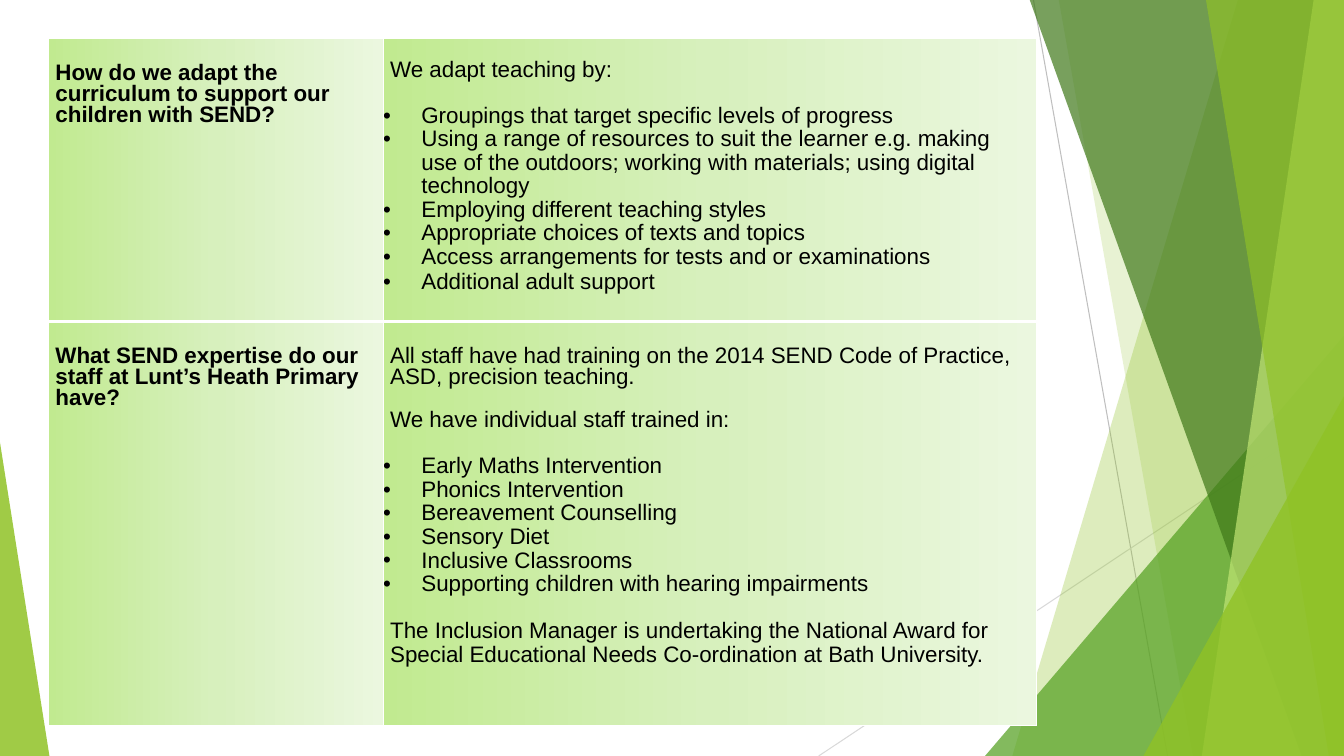
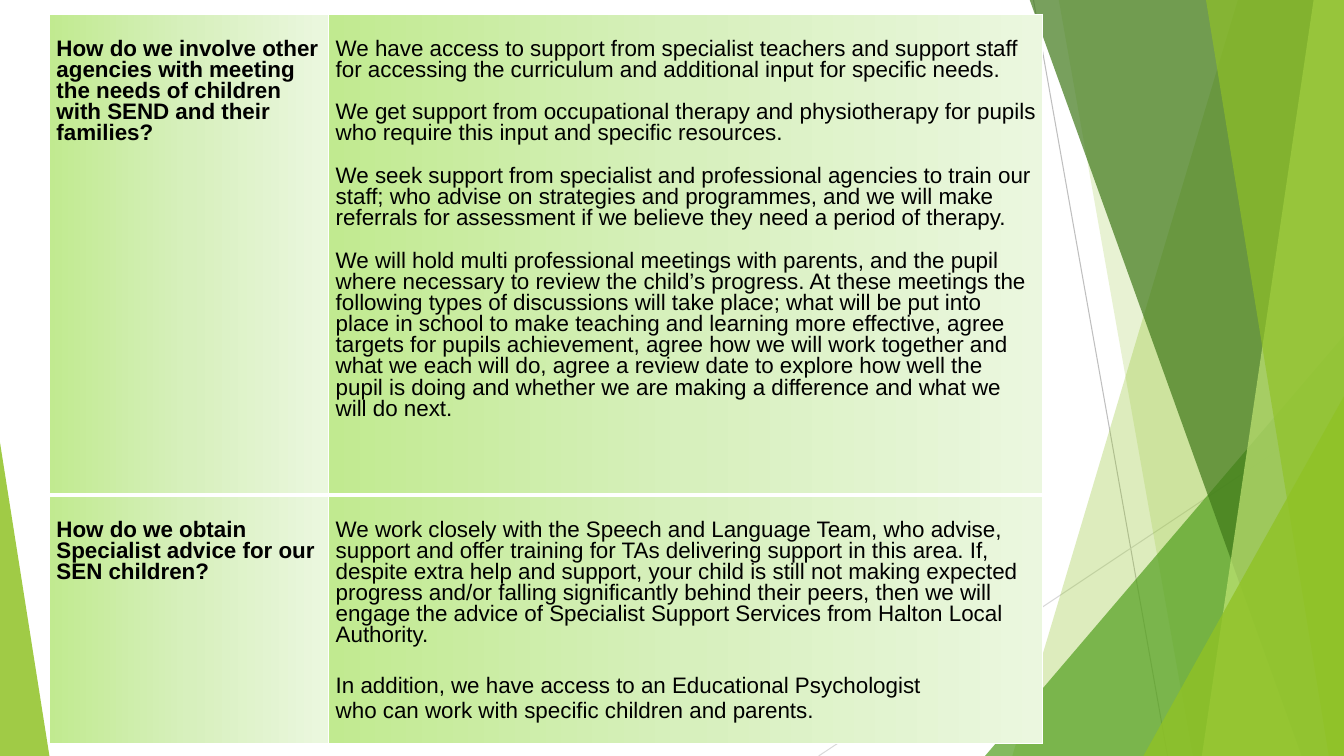
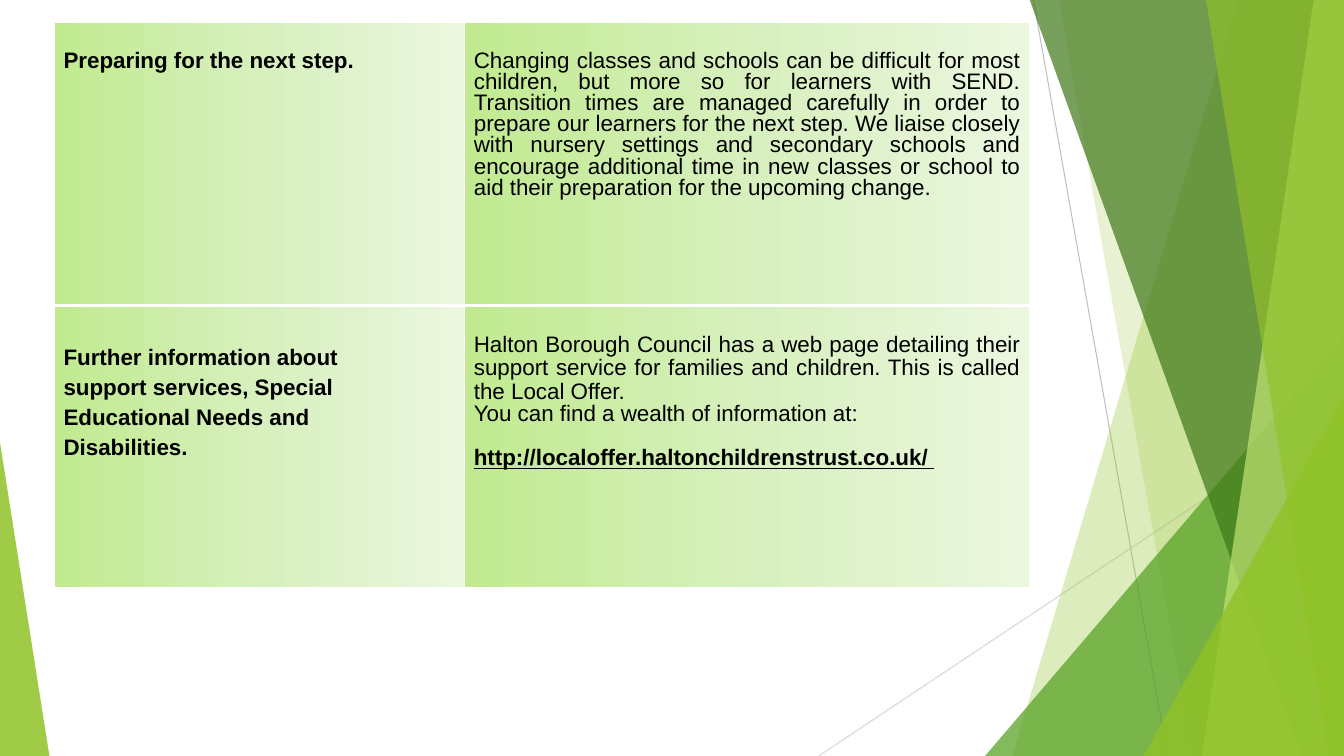
from dataclasses import dataclass

from pptx import Presentation
from pptx.dml.color import RGBColor
from pptx.enum.shapes import MSO_CONNECTOR, MSO_SHAPE
from pptx.enum.text import PP_ALIGN
from pptx.oxml import parse_xml
from pptx.oxml.ns import nsdecls, qn
from pptx.util import Inches, Pt


@dataclass(frozen=True)
class Theme:
    font: str = "Arial"
    size: int = 16
    text: str = "000000"
    border: str = "FFFFFF"
    lime: str = "90C226"
    pale_lime: str = "C0E474"
    green: str = "54A021"
    dark_green: str = "3F7819"
    line: str = "BFBFBF"
    light_line: str = "D9D9D9"
    cell_gradient: tuple = ((0, "C1EA90"), (50, "D7F0BD"), (100, "EBF7DF"))


THEME = Theme()
WIDTH, HEIGHT = 13.33, 7.5
BLANK_LAYOUT = 6
TIGHT = 0.85  # line spacing as a share of the normal height
GAP = 15.2  # points between paragraphs set tight
TIGHT_TOP = 0.25  # top margin of a cell set tight, in inches
BULLET_INDENT = 0.38


def write_text(paragraph, text, bold=False, underline=False, spacing=TIGHT,
               before=0, indent=0.07, right_indent=0, bullet=False,
               align=PP_ALIGN.LEFT):
    """Fill a paragraph; spacing is a share when float, points when Pt."""
    paragraph.alignment = align
    paragraph.line_spacing = spacing
    paragraph.space_before = Pt(before)
    properties = paragraph._p.get_or_add_pPr()
    left = Inches(BULLET_INDENT if bullet else indent)
    properties.set("marL", str(left))
    properties.set("marR", str(Inches(right_indent)))
    properties.set("indent", str(-left if bullet else 0))
    if bullet:
        for markup in (f'<a:buFont {nsdecls("a")} typeface="{THEME.font}"/>',
                       f'<a:buChar {nsdecls("a")} char="•"/>',
                       f'<a:tabLst {nsdecls("a")}><a:tab pos="{left}" algn="l"/></a:tabLst>'):
            properties.append(parse_xml(markup))
    run = paragraph.add_run()
    run.text = text
    font = run.font
    font.name, font.size = THEME.font, Pt(THEME.size)
    font.bold, font.underline = bold, underline
    font.color.rgb = RGBColor.from_string(THEME.text)


def para(text, **text_format):
    return text, text_format


def bullets(items, first_before, last_spacing=16.8):
    """Bulleted paragraphs; the gap above the first and the last line's height vary."""
    last = len(items) - 1
    return [para(item, bullet=True, right_indent=0.1,
                 spacing=Pt(last_spacing if index == last else 16.8),
                 before=0 if index else first_before)
            for index, item in enumerate(items)]


class Deck:
    def __init__(self):
        self.presentation = Presentation()
        self.presentation.slide_width = Inches(WIDTH)
        self.presentation.slide_height = Inches(HEIGHT)
        self.layout = self.presentation.slide_layouts[BLANK_LAYOUT]
        self.slide = None

    def add_slide(self):
        self.slide = self.presentation.slides.add_slide(self.layout)

    def move_to_layout(self):
        """Make the shapes of the current slide the layout's background art."""
        for placeholder in list(self.layout.placeholders):
            self.layout.shapes.element.remove(placeholder.element)
        for shape in list(self.slide.shapes):
            self.layout.shapes.element.append(shape.element)

    def line(self, start, end, color):
        connector = self.slide.shapes.add_connector(
            MSO_CONNECTOR.STRAIGHT, *map(Inches, start + end))
        connector.line.color.rgb = RGBColor.from_string(color)
        connector.line.width = Pt(0.75)
        connector.element.spPr.append(parse_xml(f'<a:effectLst {nsdecls("a")}/>'))

    def paint(self, shape, color, opacity):
        shape.shadow.inherit = False
        shape.line.fill.background()
        shape.fill.solid()
        shape.fill.fore_color.rgb = RGBColor.from_string(color)
        shape.element.spPr.find(".//" + qn("a:srgbClr")).append(
            parse_xml(f'<a:alpha {nsdecls("a")} val="{opacity * 1000}"/>'))

    def band(self, top_x, bottom_x, color, opacity):
        """Full-height area from a slanted left edge to the slide's right edge."""
        corners = [(top_x, -0.01), (WIDTH, -0.01), (WIDTH, HEIGHT), (bottom_x, HEIGHT)]
        points = [(Inches(x), Inches(y)) for x, y in corners]
        builder = self.slide.shapes.build_freeform(*points[0])
        builder.add_line_segments(points[1:], close=True)
        self.paint(builder.convert_to_shape(), color, opacity)

    def corner(self, left, top, width, apex, color, opacity):
        """Triangle standing on the bottom edge; apex 0 is left, 1 right."""
        triangle = self.slide.shapes.add_shape(
            MSO_SHAPE.ISOSCELES_TRIANGLE,
            *map(Inches, (left, top, width, HEIGHT - top)))
        triangle.adjustments[0] = apex
        self.paint(triangle, color, opacity)

    def background_art(self):
        self.line((10.25, 0), (11.58, HEIGHT), THEME.line)
        self.line((WIDTH, 4.03), (8.12, HEIGHT), THEME.light_line)
        self.band(12.28, 10.04, THEME.lime, 30)
        self.band(10.5, 11.83, THEME.lime, 20)
        self.corner(9.77, 3.33, 3.56, 1, THEME.green, 72)
        self.band(10.21, 12.91, THEME.dark_green, 70)
        self.band(13.03, 11.92, THEME.pale_lime, 70)
        self.band(11.96, 13.18, THEME.lime, 65)
        self.corner(11.34, 3.93, 1.99, 1, THEME.lime, 80)
        self.corner(0, 4.39, 0.49, 0, THEME.lime, 85)

    def style_cell(self, cell, first_row):
        properties = cell._tc.get_or_add_tcPr()
        weights = {"L": 1, "R": 1, "T": 1 if first_row else 3, "B": 3 if first_row else 1}
        for side, weight in weights.items():
            properties.append(parse_xml(
                f'<a:ln{side} {nsdecls("a")} w="{Pt(weight)}"><a:solidFill>'
                f'<a:srgbClr val="{THEME.border}"/></a:solidFill></a:ln{side}>'))
        stops = "".join(f'<a:gs pos="{position * 1000}"><a:srgbClr val="{color}"/></a:gs>'
                        for position, color in THEME.cell_gradient)
        properties.append(parse_xml(
            f'<a:gradFill {nsdecls("a")}><a:gsLst>{stops}</a:gsLst>'
            '<a:lin ang="0" scaled="0"/></a:gradFill>'))

    def table(self, left, top, columns, rows, cells):
        """Each cell is a pair: top margin in inches, list of paragraphs."""
        table = self.slide.shapes.add_table(
            len(rows), len(columns),
            *map(Inches, (left, top, sum(columns), sum(rows)))).table
        table.first_row = table.horz_banding = False
        for column, width in zip(table.columns, columns):
            column.width = Inches(width)
        for row, height in zip(table.rows, rows):
            row.height = Inches(height)
        for index, (cell, (margin_top, content)) in enumerate(zip(table.iter_cells(), cells)):
            cell.margin_left = cell.margin_right = cell.margin_bottom = 0
            cell.margin_top = Inches(margin_top)
            self.style_cell(cell, index < len(columns))
            frame = cell.text_frame
            for number, (text, text_format) in enumerate(content):
                paragraph = frame.add_paragraph() if number else frame.paragraphs[0]
                write_text(paragraph, text, **text_format)


def curriculum_slide(deck):
    adapting = bullets([
        "Groupings that target specific levels of progress",
        "Using a range of resources to suit the learner e.g. making use of the outdoors; "
        "working with materials; using digital technology",
        "Employing different teaching styles",
        "Appropriate choices of texts and topics",
        "Access arrangements for tests and or examinations",
        "Additional adult support",
    ], first_before=15.7, last_spacing=18.1)
    training = bullets([
        "Early Maths Intervention",
        "Phonics Intervention",
        "Bereavement Counselling",
        "Sensory Diet",
        "Inclusive Classrooms",
        "Supporting children with hearing impairments",
    ], first_before=16)
    deck.table(0.48, 0.38, (3.32, 6.48), (2.81, 4.01), [
        (TIGHT_TOP, [para("How do we adapt the curriculum to support our children with SEND?",
                          bold=True)]),
        (0.22, [para("We adapt teaching by:", spacing=Pt(15.7)), *adapting]),
        (TIGHT_TOP, [para("What SEND expertise do our staff at Lunt’s Heath Primary have?",
                          bold=True)]),
        (TIGHT_TOP, [
            para("All staff have had training on the 2014 SEND Code of Practice, ASD, "
                 "precision teaching."),
            para("We have individual staff trained in:", spacing=Pt(16), before=GAP),
            *training,
            para("The Inclusion Manager is undertaking the National Award for Special "
                 "Educational Needs Co-ordination at Bath University.",
                 spacing=Pt(16.8), before=16.8),
        ]),
    ])


def agencies_slide(deck):
    deck.table(0.49, 0.14, (2.77, 7.08), (4.77, 2.47), [
        (TIGHT_TOP, [para("How do we involve other agencies with meeting the needs of "
                          "children with SEND and their families?", bold=True)]),
        (TIGHT_TOP, [
            para("We have access to support from specialist teachers and support staff for "
                 "accessing the curriculum and additional input for specific needs."),
            para("We get support from occupational therapy and physiotherapy for pupils who "
                 "require this input and specific resources.", before=GAP),
            para("We seek support from specialist and professional agencies to train our "
                 "staff; who advise on strategies and programmes, and we will make referrals "
                 "for assessment if we believe they need a period of therapy.", before=GAP),
            para("We will hold multi professional meetings with parents, and the pupil where "
                 "necessary to review the child’s progress. At these meetings the following "
                 "types of discussions will take place; what will be put into place in school "
                 "to make teaching and learning more effective, agree targets for pupils "
                 "achievement, agree how we will work together and what we each will do, "
                 "agree a review date to explore how well the pupil is doing and whether we "
                 "are making a difference and what we will do next.",
                 before=GAP, right_indent=0.1),
        ]),
        (TIGHT_TOP, [para("How do we obtain Specialist advice for our SEN children?",
                          bold=True)]),
        (TIGHT_TOP, [
            para("We work closely with the Speech and Language Team, who advise, support and "
                 "offer training for TAs delivering support in this area. If, despite extra "
                 "help and support, your child is still not making expected progress and/or "
                 "falling significantly behind their peers, then we will engage the advice of "
                 "Specialist Support Services from Halton Local Authority."),
            para("In addition, we have access to an Educational Psychologist",
                 spacing=Pt(18.1), before=18.5),
            para("who can work with specific children and parents.", spacing=Pt(18.1)),
        ]),
    ])


def next_step_slide(deck):
    inset = {"indent": 0.09}
    justified = {**inset, "right_indent": 0.09, "align": PP_ALIGN.JUSTIFY}
    deck.table(0.54, 0.22, (4.07, 5.6), (2.81, 2.8), [
        (0.26, [para("Preparing for the next step.", bold=True, spacing=1.0, **inset)]),
        (0.29, [para(
            "Changing classes and schools can be difficult for most children, but more so for "
            "learners with SEND. Transition times are managed carefully in order to prepare "
            "our learners for the next step. We liaise closely with nursery settings and "
            "secondary schools and encourage additional time in new classes or school to aid "
            "their preparation for the upcoming change.", **justified)]),
        (0.34, [para("Further information about support services, Special Educational Needs "
                     "and Disabilities.", bold=True, spacing=Pt(21.6),
                     right_indent=0.75, **inset)]),
        (0.28, [
            para("Halton Borough Council has a web page detailing their support service for "
                 "families and children. This is called the Local Offer.",
                 spacing=Pt(16.8), **justified),
            para("You can find a wealth of information at:", spacing=Pt(15.8), **justified),
            para("http://localoffer.haltonchildrenstrust.co.uk/ ", bold=True, underline=True,
                 spacing=Pt(15.8), before=15.8, **justified),
        ]),
    ])


def main():
    deck = Deck()
    deck.add_slide()
    deck.background_art()
    deck.move_to_layout()
    curriculum_slide(deck)
    for build in (agencies_slide, next_step_slide):
        deck.add_slide()
        build(deck)
    deck.presentation.save("out.pptx")


if __name__ == "__main__":
    main()
